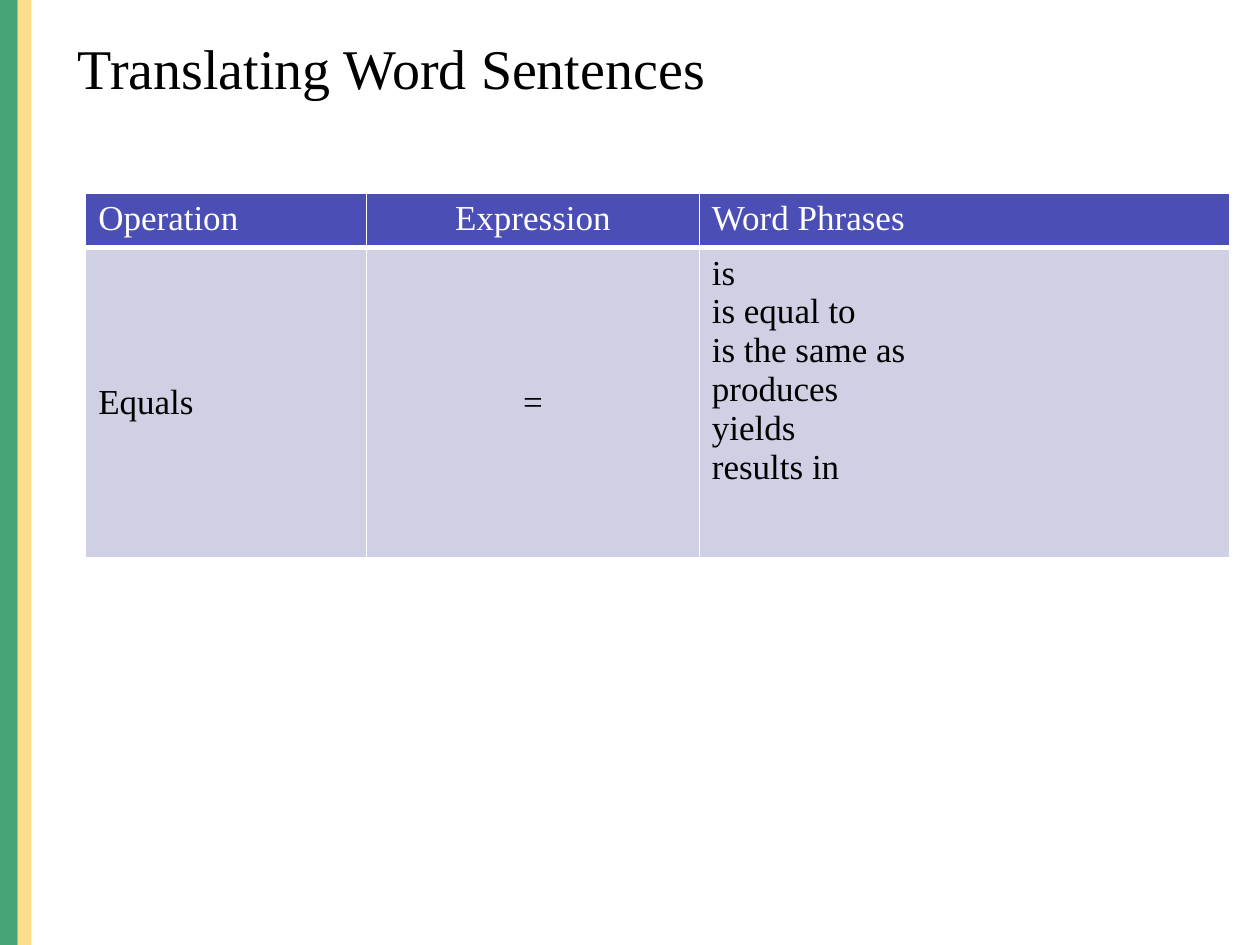
from lxml import etree
from pptx import Presentation
from pptx.dml.color import RGBColor
from pptx.enum.shapes import MSO_SHAPE
from pptx.enum.text import MSO_ANCHOR, PP_ALIGN
from pptx.oxml.ns import qn
from pptx.util import Inches, Pt

RECT = MSO_SHAPE.RECTANGLE
LEFT, CENTER = PP_ALIGN.LEFT, PP_ALIGN.CENTER
TOP, MIDDLE = MSO_ANCHOR.TOP, MSO_ANCHOR.MIDDLE

TITLE = "Translating Word Sentences"
HEADS = ["Operation", "Expression", "Word Phrases"]
PHRASES = ["is", "is equal to", "is the same as", "produces", "yields", "results in"]
ROWS = [HEADS, ["Equals", "=", "\n".join(PHRASES)]]
COLS = [2.23, 2.64, 4.21]
HEIGHTS = [0.41, 2.46]
ALIGNS = [LEFT, CENTER, LEFT]
ANCHORS = [MIDDLE, MIDDLE, TOP]
BARS = [("green", 0.14, 90), ("gold", 0.11, 50)]  # colour, width, opacity %

THEME = {
    "font": "Times New Roman", "title": 32, "body": 20,
    "ink": "000000", "white": "FFFFFF", "head": "4B4EB5", "cell": "D0D0E5",
    "green": "339966", "gold": "F8BE1A",
}


def color(name):
    return RGBColor.from_string(THEME[name])


def put_text(frame, text, size="body", ink="ink", align=LEFT, before=0):
    frame.text = text
    for para in frame.paragraphs:
        para.alignment = align
        para.space_before = Pt(before)
        font = para.runs[0].font
        font.name, font.size, font.bold = THEME["font"], Pt(THEME[size]), False
        font.color.rgb = color(ink)


def add_bar(slide, left, width, fill, alpha):
    bar = slide.shapes.add_shape(RECT, Inches(left), 0, Inches(width), Inches(7.5))
    bar.shadow.inherit = False
    bar.line.fill.background()
    bar.fill.solid()
    bar.fill.fore_color.rgb = color(fill)
    tone = bar.fill._xPr.find(".//" + qn("a:srgbClr"))
    etree.SubElement(tone, qn("a:alpha"), val=str(alpha * 1000))


def add_edges(cell, widths):
    """Draw white borders; widths maps L, R, T and B to points."""
    props = cell._tc.get_or_add_tcPr()
    for spot, (side, width) in enumerate(widths.items()):
        edge = etree.Element(qn("a:ln" + side), w=str(Pt(width)))
        fill = etree.SubElement(edge, qn("a:solidFill"))
        etree.SubElement(fill, qn("a:srgbClr"), val=THEME["white"])
        props.insert(spot, edge)


def add_grid(slide):
    table = slide.shapes.add_table(
        len(ROWS), len(COLS), Inches(0.68), Inches(1.53),
        Inches(sum(COLS)), Inches(sum(HEIGHTS))).table
    table.horz_banding = False
    for col, width in zip(table.columns, COLS):
        col.width = Inches(width)
    for r, row in enumerate(ROWS):
        table.rows[r].height = Inches(HEIGHTS[r])
        head = r == 0
        for c, text in enumerate(row):
            cell = table.cell(r, c)
            cell.vertical_anchor = TOP if head else ANCHORS[c]
            cell.fill.solid()
            cell.fill.fore_color.rgb = color("head" if head else "cell")
            put_text(cell.text_frame, text, align=ALIGNS[c],
                     ink="white" if head else "ink")
            add_edges(cell, {"L": 1, "R": 1, "T": 1 if head else 3,
                             "B": 3 if head else 1})


def main():
    deck = Presentation()
    deck.slide_width, deck.slide_height = Inches(10), Inches(7.5)
    slide = deck.slides.add_slide(deck.slide_layouts[6])
    left = 0
    for fill, width, alpha in BARS:
        add_bar(slide, left, width, fill, alpha)
        left += width
    box = slide.shapes.add_textbox(Inches(0.52), Inches(0.22), Inches(7.59), Inches(0.78))
    box.text_frame.word_wrap = True
    box.text_frame.margin_right = 0
    put_text(box.text_frame, TITLE, size="title", before=3.2)
    add_grid(slide)
    deck.save("out.pptx")


if __name__ == "__main__":
    main()
